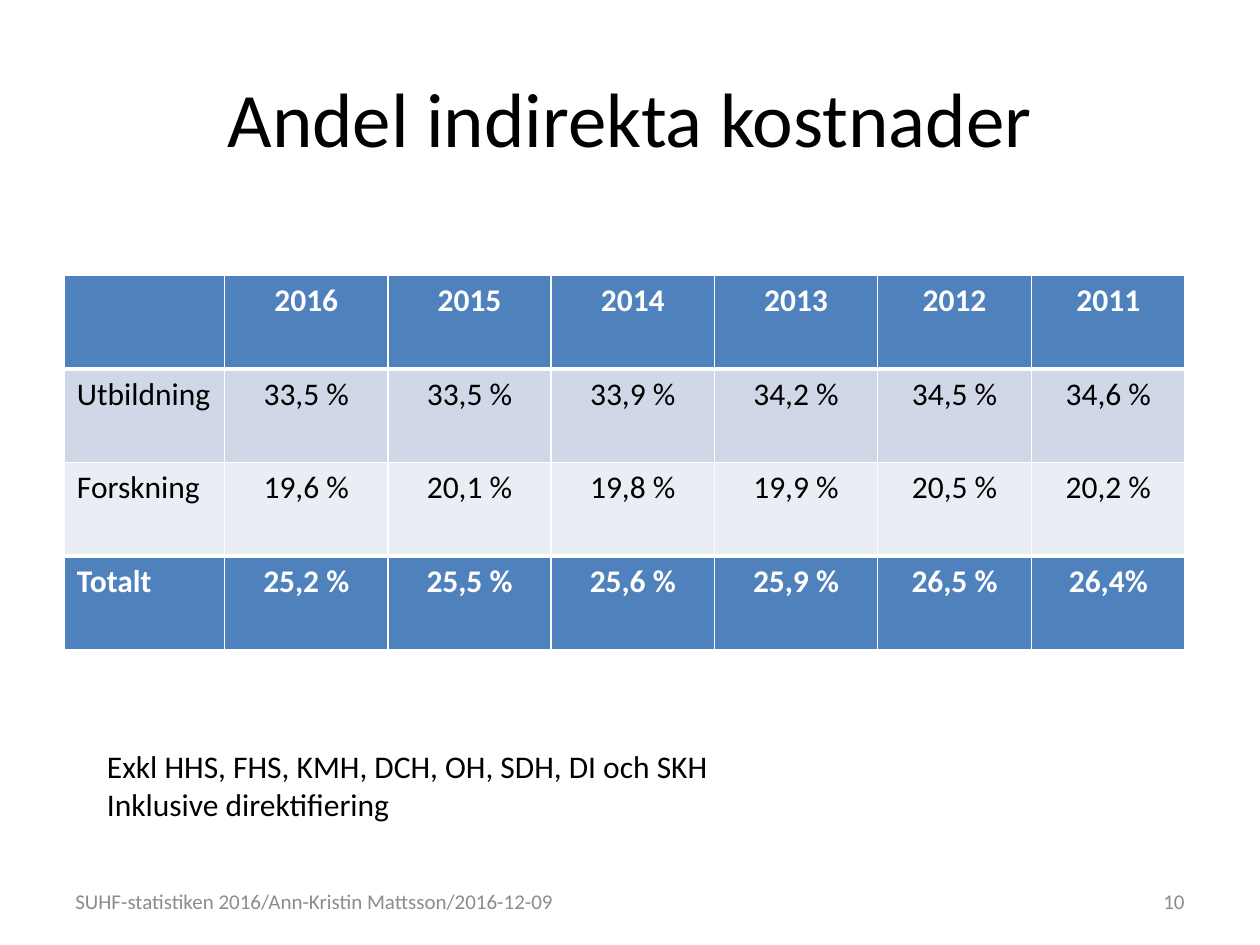
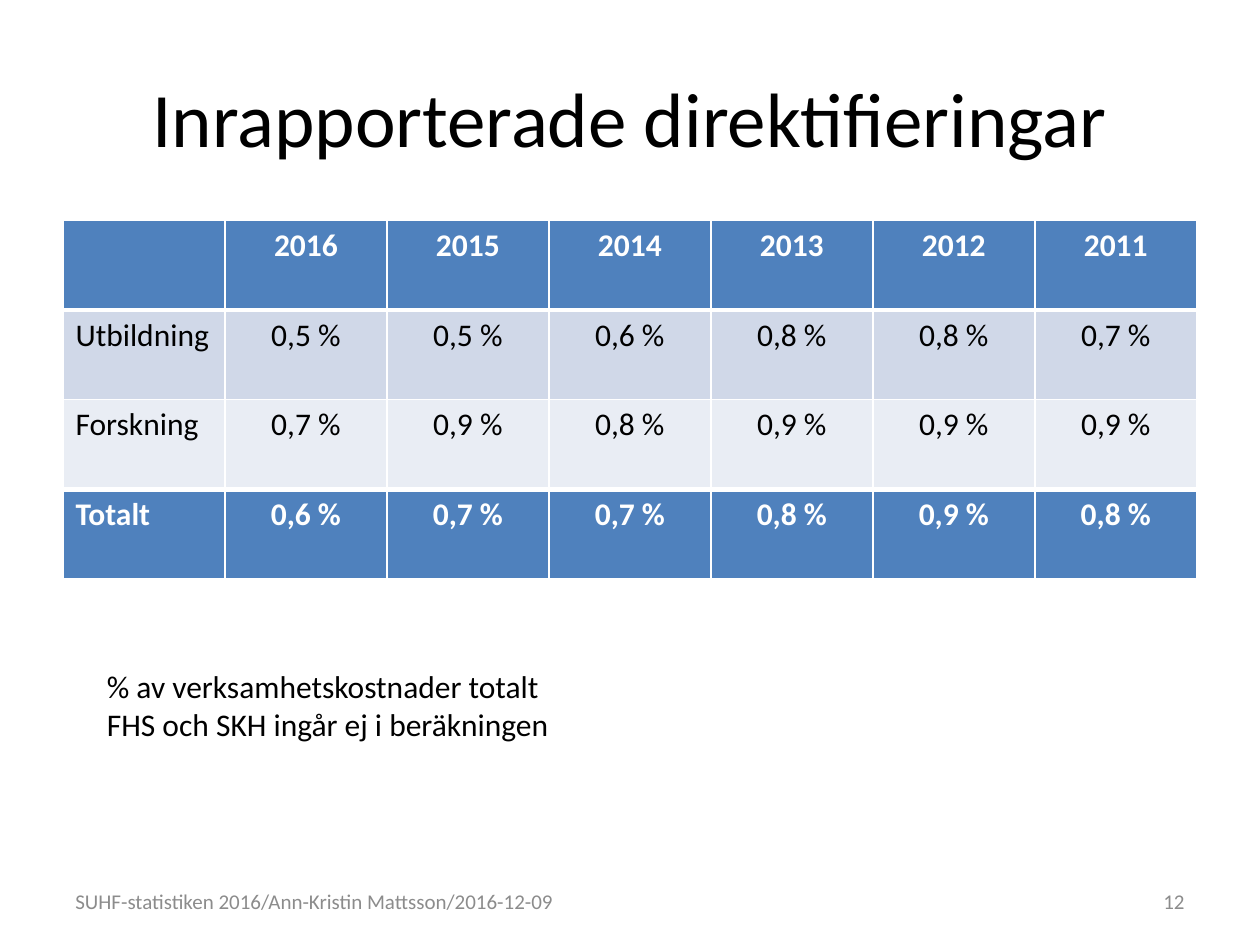
from dataclasses import dataclass
from lxml.etree import SubElement
from pptx import Presentation
from pptx.dml.color import RGBColor
from pptx.enum.text import MSO_ANCHOR, PP_ALIGN
from pptx.oxml.ns import qn
from pptx.util import Pt


@dataclass(frozen=True)
class Theme:
    font: str = "Calibri"
    black: str = "000000"
    white: str = "FFFFFF"
    blue: str = "4F81BD"
    light_blue: str = "D0D8E8"
    pale_blue: str = "E9EDF4"
    grey: str = "8C8C8C"
    title_size: int = 44
    body_size: int = 18
    footer_size: int = 12
    thin_line: int = 1
    thick_line: int = 3


theme = Theme()


def write(frame, lines, size, color, align=PP_ALIGN.LEFT, bold=False):
    """Fill a text frame with one paragraph per line."""
    for index, line in enumerate(lines):
        para = frame.paragraphs[0] if index == 0 else frame.add_paragraph()
        para.alignment = align
        span = para.add_run()
        span.text = line
        span.font.name = theme.font
        span.font.size = Pt(size)
        span.font.bold = bold
        span.font.color.rgb = RGBColor.from_string(color)


def add_text(page, area, lines, size, color, align=PP_ALIGN.LEFT,
             anchor=MSO_ANCHOR.MIDDLE):
    """Add a wrapping text box; area is left, top, width, height."""
    box = page.shapes.add_textbox(*map(Pt, area))
    box.text_frame.word_wrap = True
    box.text_frame.vertical_anchor = anchor
    write(box.text_frame, lines, size, color, align)


# Content
footer = "SUHF-statistiken 2016/Ann-Kristin Mattsson/2016-12-09"
header = ["", "2016", "2015", "2014", "2013", "2012", "2011"]
row_fills = [theme.blue, theme.light_blue, theme.pale_blue, theme.blue]
slides = [
    {
        "title": "Andel indirekta kostnader",
        "number": "10",
        "table_at": (36.8, 157.5),
        "columns": [91.6] + [93.3] * 4 + [87.9] * 2,
        "row_height": 53.4,
        "rows": [
            ["Utbildning", "33,5 %", "33,5 %", "33,9 %", "34,2 %", "34,5 %", "34,6 %"],
            ["Forskning", "19,6 %", "20,1 %", "19,8 %", "19,9 %", "20,5 %", "20,2 %"],
            ["Totalt", "25,2 %", "25,5 %", "25,6 %", "25,9 %", "26,5 %", "26,4%"],
        ],
        "note_at": (54, 423.3, 362, 51),
        "note": ["Exkl HHS, FHS, KMH, DCH, OH, SDH, DI och SKH",
                 "Inklusive direktifiering"],
    },
    {
        "title": "Inrapporterade direktifieringar",
        "number": "12",
        "table_at": (36, 126),
        "columns": [648 / 7] * 7,
        "row_height": 51.2,
        "rows": [
            ["Utbildning", "0,5 %", "0,5 %", "0,6 %", "0,8 %", "0,8 %", "0,7 %"],
            ["Forskning", "0,7 %", "0,9 %", "0,8 %", "0,9 %", "0,9 %", "0,9 %"],
            ["Totalt", "0,6 %", "0,7 %", "0,7 %", "0,8 %", "0,9 %", "0,8 %"],
        ],
        "note_at": (54, 377.8, 317.5, 51),
        "note": ["% av verksamhetskostnader totalt",
                 "FHS och SKH ingår ej i beräkningen"],
    },
]

deck = Presentation()
deck.slide_width, deck.slide_height = Pt(720), Pt(540)

for content in slides:
    page = deck.slides.add_slide(deck.slide_layouts[6])

    # Title
    add_text(page, (36, 21.6, 648, 90), [content["title"]],
             theme.title_size, theme.black, PP_ALIGN.CENTER)

    # Table grid
    rows = [header] + content["rows"]
    widths = content["columns"]
    height = content["row_height"]
    table = page.shapes.add_table(
        len(rows), len(header), *map(Pt, content["table_at"]),
        Pt(sum(widths)), Pt(height * len(rows))).table
    for column, width in zip(table.columns, widths):
        column.width = Pt(width)
    for row in table.rows:
        row.height = Pt(height)

    # Cells: thick rules below the header and above the total
    thick_edges = (1, len(rows) - 1)
    for row_index, values in enumerate(rows):
        strong = row_fills[row_index] == theme.blue
        for column_index, value in enumerate(values):
            cell = table.cell(row_index, column_index)
            properties = cell._tc.get_or_add_tcPr()
            edges = {"a:lnL": None, "a:lnR": None,
                     "a:lnT": row_index, "a:lnB": row_index + 1}
            for tag, edge in edges.items():
                weight = theme.thick_line if edge in thick_edges else theme.thin_line
                line = SubElement(properties, qn(tag), w=str(Pt(weight)))
                SubElement(SubElement(line, qn("a:solidFill")),
                           qn("a:srgbClr"), val=theme.white)
            cell.fill.solid()
            cell.fill.fore_color.rgb = RGBColor.from_string(row_fills[row_index])
            if value:
                write(cell.text_frame, [value], theme.body_size,
                      theme.white if strong else theme.black,
                      PP_ALIGN.CENTER if column_index else PP_ALIGN.LEFT, strong)

    # Footer and page number
    add_text(page, (36, 500.5, 330, 28.8), [footer], theme.footer_size, theme.grey)
    add_text(page, (516, 500.5, 168, 28.8), [content["number"]],
             theme.footer_size, theme.grey, PP_ALIGN.RIGHT)

    # Note below the table
    add_text(page, content["note_at"], content["note"], theme.body_size,
             theme.black, anchor=MSO_ANCHOR.TOP)

deck.save("out.pptx")
